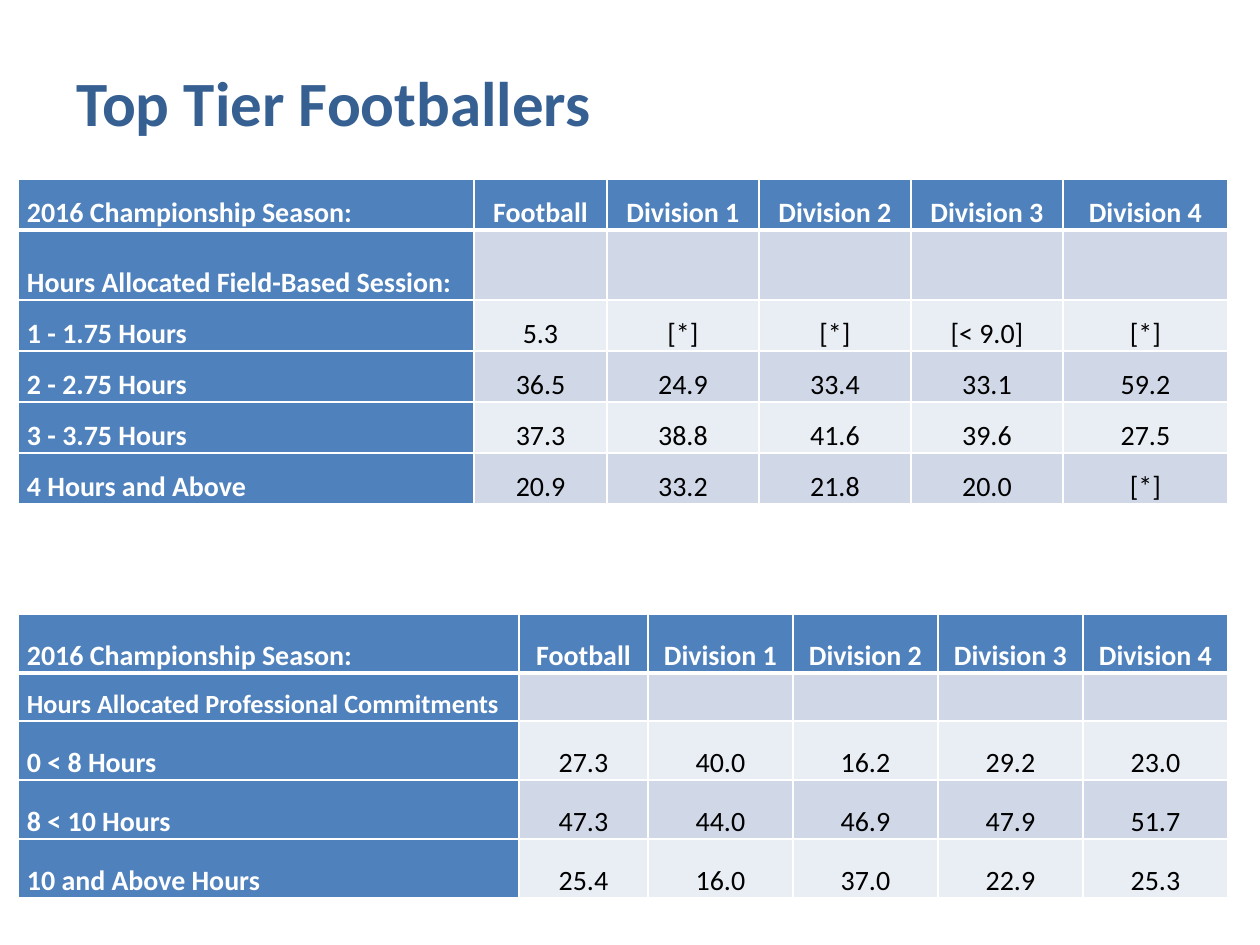
from lxml import etree
from pptx import Presentation
from pptx.dml.color import RGBColor
from pptx.enum.text import MSO_ANCHOR, PP_ALIGN
from pptx.oxml.ns import qn
from pptx.util import Pt

BOTTOM = MSO_ANCHOR.BOTTOM
LEFT, CENTER = PP_ALIGN.LEFT, PP_ALIGN.CENTER
PX = 914400 / 126
COLORS = {
    "title": "376092",
    "header": "4F81BD",
    "band_dark": "D0D8E8",
    "band_light": "E9EDF4",
    "white": "FFFFFF",
    "black": "000000",
}
CELL_FORMAT = {
    "vertical_anchor": BOTTOM,
    "margin_left": round(9 * PX),
    "margin_right": round(9 * PX),
    "margin_top": 0,
    "margin_bottom": 0,
}
HEADINGS = ["2016 Championship Season:", "Football",
            "Division 1", "Division 2", "Division 3", "Division 4"]
FIELD_SESSIONS = [
    HEADINGS,
    ["Hours Allocated Field-Based Session:"] + [""] * 5,
    ["1 - 1.75 Hours", "5.3", "[*]", "[*]", "[< 9.0]", "[*]"],
    ["2 - 2.75 Hours", "36.5", "24.9", "33.4", "33.1", "59.2"],
    ["3 - 3.75 Hours", "37.3", "38.8", "41.6", "39.6", "27.5"],
    ["4 Hours and Above", "20.9", "33.2", "21.8", "20.0", "[*]"],
]
PROFESSIONAL_COMMITMENTS = [
    HEADINGS,
    ["Hours Allocated Professional Commitments"] + [""] * 5,
    ["0 < 8 Hours", "27.3", "40.0", "16.2", "29.2", "23.0"],
    ["8 < 10 Hours", "47.3", "44.0", "46.9", "47.9", "51.7"],
    ["10 and Above Hours", "25.4", "16.0", "37.0", "22.9", "25.3"],
]


def emu(px):
    return round(px * PX)


def color(name):
    return RGBColor.from_string(COLORS[name])


def apply_format(target, values):
    for name, value in values.items():
        setattr(target, name, value)


def style_font(font, size, color_name, bold):
    apply_format(font, {"name": "Calibri", "size": Pt(size), "bold": bold})
    font.color.rgb = color(color_name)


def add_borders(cell, widths):
    properties = cell._tc.get_or_add_tcPr()
    for position, (side, width) in enumerate(widths.items()):
        line = etree.Element(qn(f"a:{side}"), w=str(Pt(width)))
        fill = etree.SubElement(line, qn("a:solidFill"))
        etree.SubElement(fill, qn("a:srgbClr"), val=COLORS["white"])
        properties.insert(position, line)


def fill_cell(cell, text, row, column, label_size):
    is_heading = row == 0 or column == 0
    band = "band_dark" if row % 2 else "band_light"
    apply_format(cell, CELL_FORMAT)
    cell.fill.solid()
    cell.fill.fore_color.rgb = color("header" if is_heading else band)
    add_borders(cell, {"lnL": 1, "lnR": 1,
                       "lnT": 3 if row == 1 else 1,
                       "lnB": 3 if row == 0 else 1})
    if not text:
        return
    cell.text = text
    paragraph = cell.text_frame.paragraphs[0]
    apply_format(paragraph, {
        "alignment": CENTER if column else LEFT,
        "line_spacing": 1.15 if row == column == 0 else 1.5,
    })
    style_font(paragraph.runs[0].font, label_size if row == 1 else 16,
               "white" if is_heading else "black", is_heading)


def add_hours_table(slide, box, rows, widths, heights, label_size):
    table = slide.shapes.add_table(
        len(rows), len(widths), *map(emu, box)).table
    for column, width in zip(table.columns, widths):
        column.width = emu(width)
    for row, height in zip(table.rows, heights):
        row.height = emu(height)
    for row, texts in enumerate(rows):
        for column, text in enumerate(texts):
            fill_cell(table.cell(row, column), text, row, column, label_size)


def add_title(slide, box, text):
    frame = slide.shapes.add_textbox(*map(emu, box)).text_frame
    apply_format(frame, {"word_wrap": True, "vertical_anchor": BOTTOM})
    run = frame.paragraphs[0].add_run()
    run.text = text
    style_font(run.font, 36, "title", True)


def main():
    presentation = Presentation()
    apply_format(presentation, {"slide_width": emu(1260),
                                "slide_height": emu(945)})
    slide = presentation.slides.add_slide(presentation.slide_layouts[6])
    add_title(slide, (64, 71, 1128, 74), "Top Tier Footballers")
    add_hours_table(slide, (18, 179, 1210, 325), FIELD_SESSIONS,
                    [456, 133] + [152] * 3 + [165],
                    [51, 70] + [51] * 4, 16)
    add_hours_table(slide, (18, 614, 1210, 283), PROFESSIONAL_COMMITMENTS,
                    [501, 129] + [145] * 4,
                    [59, 48] + [59] * 3, 15)
    presentation.save("out.pptx")


if __name__ == "__main__":
    main()
